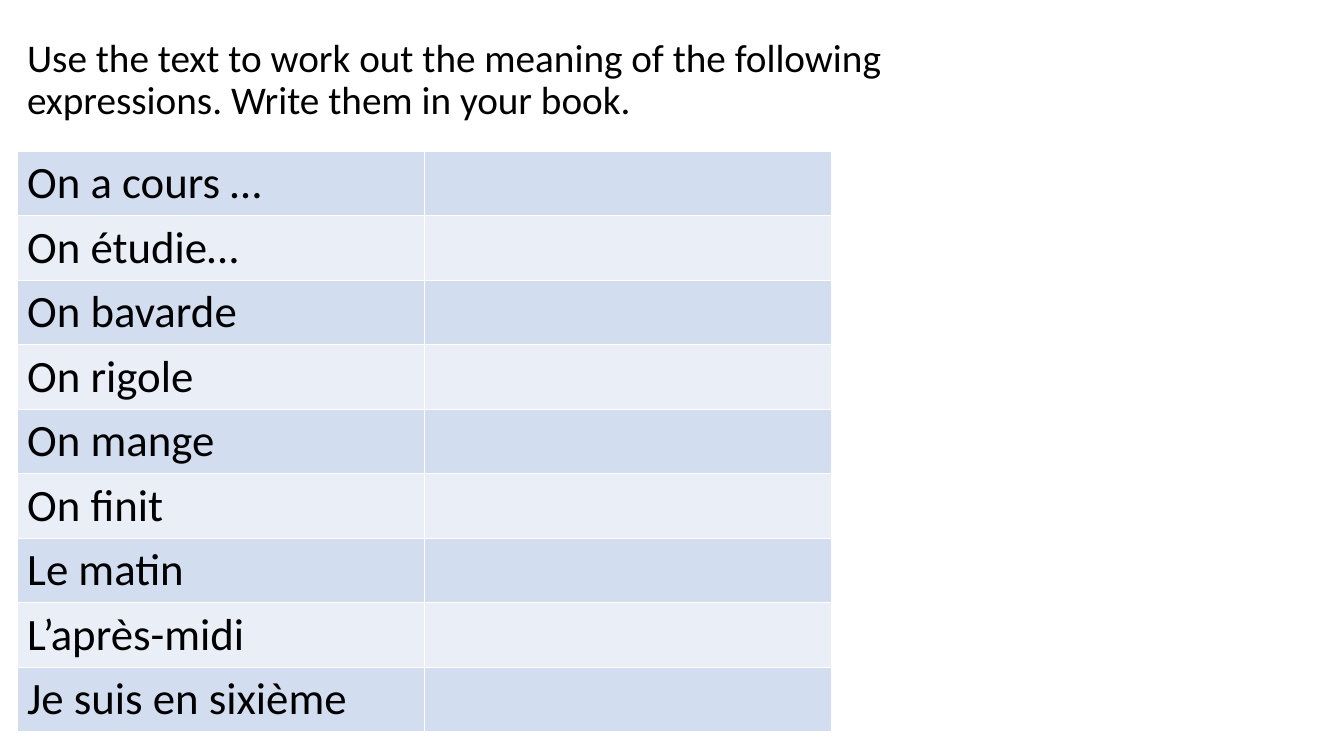
from lxml import etree
from pptx import Presentation
from pptx import util as u
from pptx.dml.color import RGBColor
from pptx.enum import text
from pptx.oxml.ns import qn

PX = 9144  # EMU per px, 100 px to the inch

EXPRESSIONS = [
    "On a cours …", "On étudie…", "On bavarde", "On rigole", "On mange",
    "On finit", "Le matin", "L’après-midi", "Je suis en sixième",
]


def px(length):
    return u.Emu(length * PX)


def colour(value):
    return RGBColor.from_string(value)


class Worksheet:
    font = "Calibri"
    ink = "000000"
    rule = "FFFFFF"
    bands = ("D2DEEF", "EAEFF7")

    def __init__(self, deck):
        self.page = deck.slides.add_slide(deck.slide_layouts[6])

    def add_words(self, frame, words, size, spacing=1.0):
        para = frame.paragraphs[0]
        para.line_spacing = spacing
        span = para.add_run()
        span.text = words
        span.font.name = self.font
        span.font.size = u.Pt(size)
        span.font.color.rgb = colour(self.ink)

    def heading(self, words, left, top, width, height):
        box = self.page.shapes.add_textbox(px(left), px(top), px(width), px(height))
        frame = box.text_frame
        frame.word_wrap = True
        frame.vertical_anchor = text.MSO_ANCHOR.MIDDLE
        self.add_words(frame, words, size=28, spacing=0.9)

    def borders(self, cell):
        properties = cell._tc.get_or_add_tcPr()
        for place, side in enumerate(("lnL", "lnR", "lnT", "lnB")):
            line = etree.Element(qn(f"a:{side}"), w=str(u.Pt(1)))
            fill = etree.SubElement(line, qn("a:solidFill"))
            etree.SubElement(fill, qn("a:srgbClr"), val=self.rule)
            properties.insert(place, line)

    def answer_table(self, prompts, left, top, column, row):
        count = len(prompts)
        table = self.page.shapes.add_table(
            count, 2, px(left), px(top), px(2 * column), px(count * row)).table
        table.first_row = table.horz_banding = False
        for index, prompt in enumerate(prompts):
            for cell in table.rows[index].cells:
                cell.fill.solid()
                cell.fill.fore_color.rgb = colour(self.bands[index % 2])
                self.borders(cell)
            self.add_words(table.cell(index, 0).text_frame, prompt, size=32)


def main():
    deck = Presentation()
    deck.slide_width, deck.slide_height = u.Inches(13.33), u.Inches(7.5)
    sheet = Worksheet(deck)

    # Instruction
    sheet.heading("Use the text to work out the meaning of the following "
                  "expressions. Write them in your book.", 17, 33, 979, 94)

    # French expressions with space for the meanings
    sheet.answer_table(EXPRESSIONS, 17, 150, column=404, row=64)

    deck.save("out.pptx")


if __name__ == "__main__":
    main()
